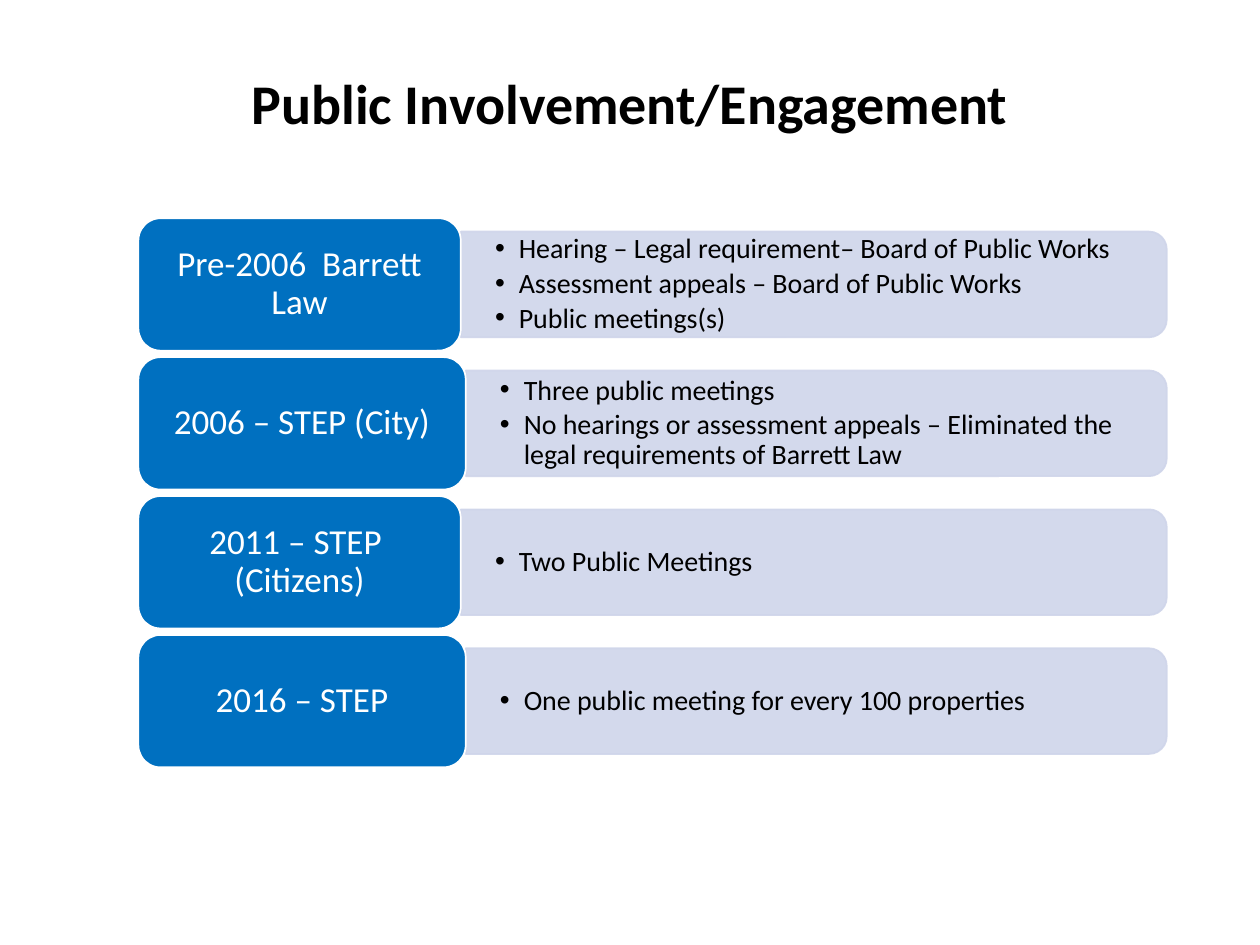
"""Build the Public Involvement/Engagement slide."""
from dataclasses import dataclass

from lxml import etree
from pptx import Presentation
from pptx import util as u
from pptx.dml.color import RGBColor
from pptx.enum import shapes, text
from pptx.oxml.ns import qn


@dataclass(frozen=True)
class Theme:
    font: str = "Calibri"
    ink: str = "000000"
    light: str = "FFFFFF"
    label: str = "0070C0"
    band: str = "CFD5EA"
    title_size: int = 32
    label_size: int = 20
    list_size: int = 16


ROWS = [
    ("Pre-2006  Barrett Law", 6.5, [
        "Hearing – Legal requirement– Board of Public Works",
        "Assessment appeals – Board of Public Works",
        "Public meetings(s)",
    ]),
    ("2006 – STEP (City)", 6.6, [
        "Three public meetings",
        "No hearings or assessment appeals – Eliminated the legal requirements of Barrett Law",
    ]),
    ("2011 – STEP  (Citizens)", 6.5, ["Two Public Meetings"]),
    ("2016 – STEP", 6.6, ["One public meeting for every 100 properties"]),
]
LEFT, RIGHT, TOP, PITCH = 2.79, 23.52, 4.4, 2.8
LABEL_H, BAND_H = 2.67, 2.13


def write(p, words, theme, size, color, bold=False, align=text.PP_ALIGN.CENTER, after=0):
    p.alignment = align
    p.line_spacing = 0.9
    p.space_before = u.Pt(0)
    p.space_after = u.Pt(after)
    r = p.add_run()
    r.text = words
    r.font.name = theme.font
    r.font.size = u.Pt(size)
    r.font.bold = bold
    r.font.color.rgb = RGBColor.from_string(color)


def set_frame(tf, x_margin, y_margin):
    tf.word_wrap = True
    tf.auto_size = text.MSO_AUTO_SIZE.NONE
    tf.vertical_anchor = text.MSO_ANCHOR.MIDDLE
    tf.margin_left = tf.margin_right = u.Cm(x_margin)
    tf.margin_top = tf.margin_bottom = u.Cm(y_margin)


class Deck:
    def __init__(self, prs, theme):
        self.theme = theme
        self.s = prs.slides.add_slide(prs.slide_layouts[5])

    def title(self, words, x, y, w, h):
        sp = self.s.shapes.title
        sp.left, sp.top, sp.width, sp.height = map(u.Cm, (x, y, w, h))
        set_frame(sp.text_frame, 0.25, 0.13)
        write(sp.text_frame.paragraphs[0], words, self.theme,
              self.theme.title_size, self.theme.ink, bold=True)

    def shape(self, kind, x, y, w, h, fill, line):
        sp = self.s.shapes.add_shape(kind, *map(u.Cm, (x, y, w, h)))
        sp.shadow.inherit = False
        sp.fill.solid()
        sp.fill.fore_color.rgb = RGBColor.from_string(fill)
        sp.line.color.rgb = RGBColor.from_string(line)
        sp.line.width = u.Pt(1)
        return sp

    def band(self, x, y, w, h):
        sp = self.shape(shapes.MSO_SHAPE.ROUND_2_SAME_RECTANGLE,
                        x + (w - h) / 2, y + (h - w) / 2, h, w,
                        self.theme.band, self.theme.band)
        sp.rotation = 90
        for clr in sp._element.spPr.iter(qn("a:srgbClr")):
            etree.SubElement(clr, qn("a:alpha"), val="90000")

    def label(self, words, x, y, w, h):
        sp = self.shape(shapes.MSO_SHAPE.ROUNDED_RECTANGLE, x, y, w, h,
                        self.theme.label, self.theme.light)
        set_frame(sp.text_frame, 0.33, 0.23)
        write(sp.text_frame.paragraphs[0], words, self.theme,
              self.theme.label_size, self.theme.light)

    def bullets(self, items, x, y, w, h):
        tf = self.s.shapes.add_textbox(*map(u.Cm, (x, y, w, h))).text_frame
        set_frame(tf, 0.69, 0)
        for i, item in enumerate(items):
            p = tf.add_paragraph() if i else tf.paragraphs[0]
            pPr = p._p.get_or_add_pPr()
            pPr.set("marL", str(u.Cm(0.48)))
            pPr.set("indent", str(u.Cm(-0.48)))
            etree.SubElement(pPr, qn("a:buFont"), typeface="Arial")
            etree.SubElement(pPr, qn("a:buChar"), char="•")
            write(p, item, self.theme, self.theme.list_size, self.theme.ink,
                  align=text.PP_ALIGN.LEFT, after=2.5)


def main():
    prs = Presentation()
    prs.slide_width, prs.slide_height = u.Cm(25.4), u.Cm(19.05)
    deck = Deck(prs, Theme())
    deck.title("Public Involvement/Engagement", 1.75, 1.02, 21.9, 2.24)
    for i, (name, label_w, items) in enumerate(ROWS):
        y = TOP + i * PITCH
        x = LEFT + label_w
        band_y = y + (LABEL_H - BAND_H) / 2
        deck.band(x, band_y, RIGHT - x, BAND_H)
        deck.bullets(items, x, band_y, RIGHT - x - 0.1, BAND_H)
        deck.label(name, LEFT, y, label_w, LABEL_H)
    prs.save("out.pptx")


if __name__ == "__main__":
    main()
